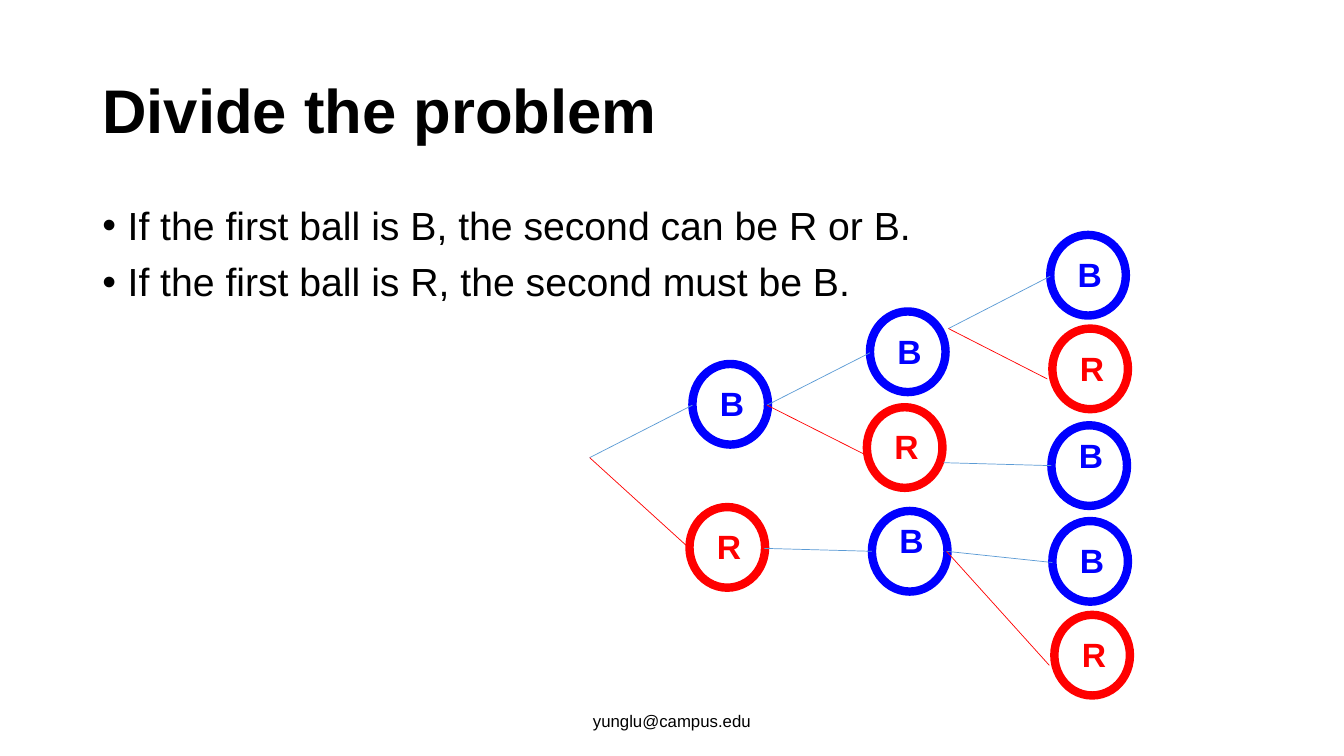
"""Build the slide that splits the ball problem into a tree of choices."""
from lxml.etree import SubElement as Sub
from pptx import Presentation as Deck
from pptx.dml.color import RGBColor as Rgb
from pptx.enum.shapes import MSO_CONNECTOR as Link, MSO_SHAPE as Shape
from pptx.enum.text import MSO_ANCHOR as Anchor, MSO_AUTO_SIZE as Fit, PP_ALIGN as Align
from pptx.oxml.ns import qn
from pptx.util import Pt

COLORS = {"B": "0000FF", "R": "FF0000", "link": "5B9BD5", "text": "000000"}
TITLE = {"size": Pt(44), "bold": True}
BODY = {"size": Pt(28), "bold": False}
FOOT = {"size": Pt(12), "bold": False}
MARK = {"size": Pt(24), "bold": True}
LIST = {"line_spacing": 0.9, "space_before": Pt(10), "alignment": Align.LEFT}
HEAD = {"line_spacing": 0.9, "space_before": Pt(0), "alignment": Align.LEFT}
MID = {"alignment": Align.CENTER}
WIDE, HIGH = 54, 57.6

LINES = ["If the first ball is B, the second can be R or B.",
         "If the first ball is R, the second must be B."]
BALLS = [("B", 494.6, 260, 10), ("R", 492.5, 362.2, 10),
         ("B", 621.4, 222.5, 10), ("R", 619.2, 290.9, 10),
         ("B", 622.8, 365, 3), ("B", 750.2, 167.8, 10),
         ("R", 751.7, 234.7, 10), ("B", 751, 303.8, 3),
         ("B", 751.7, 372.2, 10), ("R", 753.1, 439.2, 10)]
FORKS = [((421.2, 326.9), {"link": (494.6, 289.4), "R": (492.5, 391.7)}),
         ((547.9, 289.4), {"link": (621.4, 252), "R": (619.2, 325.4)}),
         ((545.8, 391.7), {"link": (622.8, 393.8)}),
         ((677.5, 234.7), {"link": (750.2, 197.3), "R": (748.1, 270.7)}),
         ((673.9, 330.5), {"link": (751, 332.6)}),
         ((676.1, 393.8), {"link": (751.7, 401.8), "R": (749.5, 475.2)})]


def paint(color):
    return Rgb.from_string(COLORS[color])


def apply(item, values):
    for name, value in values.items():
        setattr(item, name, value)


def place(shape, left, top, width, height):
    apply(shape, {"left": Pt(left), "top": Pt(top),
                  "width": Pt(width), "height": Pt(height)})


def write(shape, lines, font, para, color="text"):
    frame = shape.text_frame
    frame.text = "\n".join(lines)
    for item in frame.paragraphs:
        apply(item, para)
        for run in item.runs:
            apply(run.font, {"name": "Arial", **font})
            run.font.color.rgb = paint(color)
    return frame


def bullet(frame):
    for item in frame.paragraphs:
        props = item._p.get_or_add_pPr()
        props.set("marL", str(Pt(18)))
        props.set("indent", str(Pt(-18)))
        Sub(props, qn("a:buFont"), typeface="Arial")
        Sub(props, qn("a:buChar"), char="•")


def ball(slide, mark, left, top, drop):
    ring = slide.shapes.add_shape(Shape.OVAL, Pt(left), Pt(top), Pt(WIDE), Pt(HIGH))
    ring.shadow.inherit = False
    ring.fill.background()
    ring.line.color.rgb = paint(mark)
    ring.line.width = Pt(6)
    label = slide.shapes.add_textbox(Pt(left + 12.5), Pt(top + drop), Pt(32.4), Pt(36))
    frame = write(label, [mark], MARK, {}, mark)
    apply(frame, {"word_wrap": False, "auto_size": Fit.SHAPE_TO_FIT_TEXT})


def branch(slide, start, end, color):
    line = slide.shapes.add_connector(Link.STRAIGHT, *map(Pt, start + end))
    line.line.color.rgb = paint(color)
    line.line.width = Pt(0.5)
    Sub(line._element.spPr, qn("a:effectLst"))


def main():
    deck = Deck()
    apply(deck, {"slide_width": Pt(960), "slide_height": Pt(540)})
    slide = deck.slides.add_slide(deck.slide_layouts[1])

    title, body = slide.placeholders
    place(title, 66, 28.8, 828, 104.4)
    frame = write(title, ["Divide the problem"], TITLE, HEAD)
    apply(frame, {"vertical_anchor": Anchor.MIDDLE, "auto_size": Fit.NONE})
    place(body, 66, 144, 828, 342.7)
    frame = write(body, LINES, BODY, LIST)
    frame.auto_size = Fit.NONE
    bullet(frame)

    foot = slide.shapes.add_textbox(Pt(318), Pt(500.5), Pt(324), Pt(28.8))
    frame = write(foot, ["yunglu@campus.edu"], FOOT, MID)
    apply(frame, {"word_wrap": True, "vertical_anchor": Anchor.MIDDLE})

    for item in BALLS:
        ball(slide, *item)
    for start, ends in FORKS:
        for color, end in ends.items():
            branch(slide, start, end, color)
    deck.save("out.pptx")


if __name__ == "__main__":
    main()
